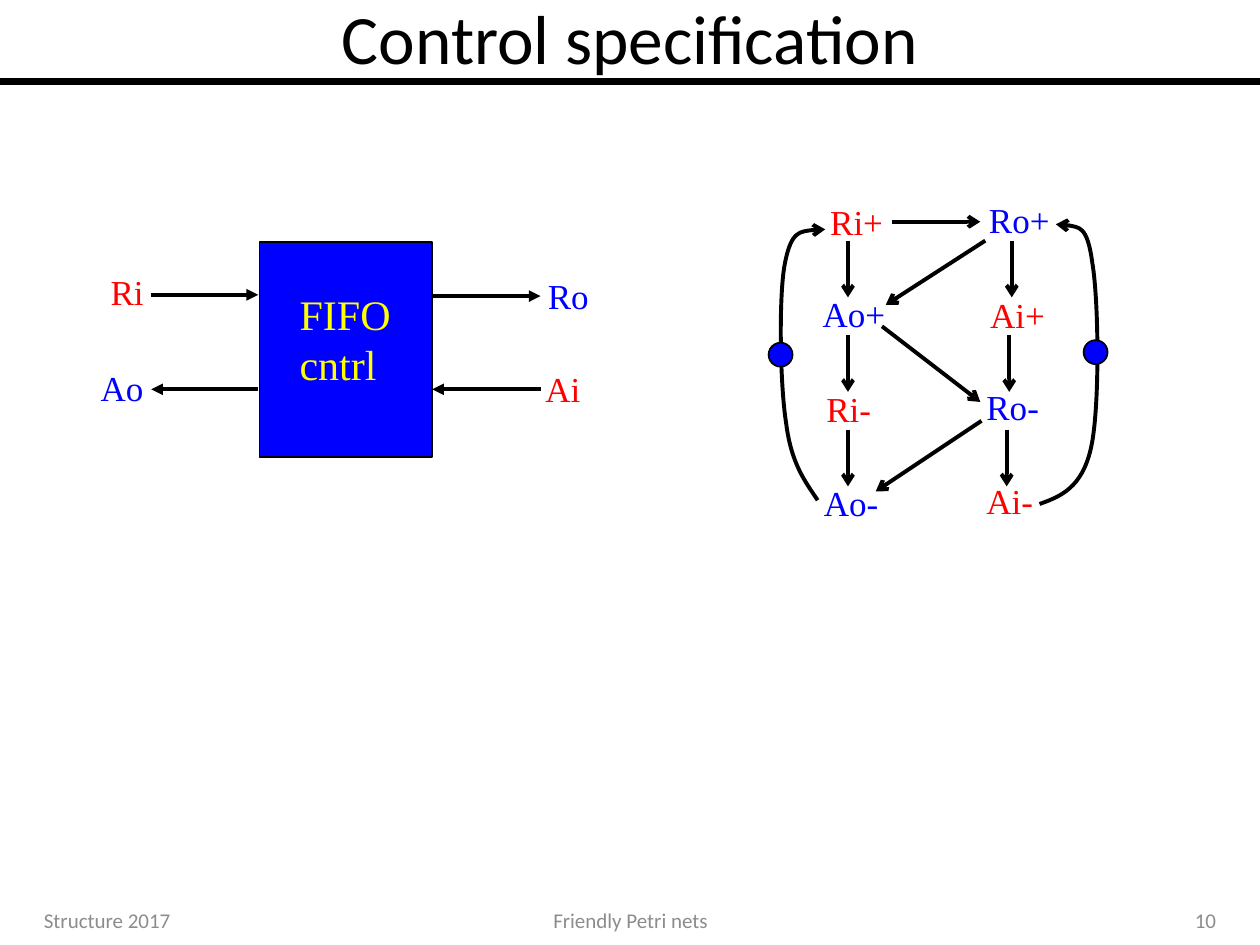
"""Build the control specification slide: a FIFO controller and its signal graph."""
from lxml import etree
from pptx import Presentation
from pptx.dml.color import RGBColor
from pptx.enum import shapes, text
from pptx.oxml import ns
from pptx.util import Inches, Pt

BLACK, RED, BLUE, YELLOW, GREY = "000000", "FF0000", "0000FF", "FFFF00", "8C8C8C"
SERIF, SANS = "Times New Roman", "Calibri"


def write(place, lines, color, size=20, font=SERIF, align="LEFT", anchor=None):
    box = page.shapes.add_textbox(*map(Inches, place))
    frame = box.text_frame
    frame.word_wrap = anchor is not None
    if anchor:
        frame.vertical_anchor = text.MSO_ANCHOR[anchor]
    else:
        frame.auto_size = text.MSO_AUTO_SIZE.SHAPE_TO_FIT_TEXT
    frame.text = lines
    for para in frame.paragraphs:
        para.alignment = text.PP_ALIGN[align]
        for span in para.runs:
            for name, value in {"size": Pt(size), "name": font}.items():
                setattr(span.font, name, value)
            span.font.color.rgb = RGBColor.from_string(color)


def stroke(item, width=2.25, head=None):
    item.line.color.rgb = RGBColor.from_string(BLACK)
    item.line.width = Pt(width)
    properties = item._element.spPr
    if head:
        etree.SubElement(properties.find(ns.qn("a:ln")), ns.qn("a:tailEnd"), type=head)
    etree.SubElement(properties, ns.qn("a:effectLst"))


deck = Presentation()
deck.slide_width, deck.slide_height = Inches(10), Inches(7.5)
page = deck.slides.add_slide(deck.slide_layouts[6])

write((0.5, 0, 9, 0.58), "Control specification", BLACK, 39.6, SANS, "CENTER", "MIDDLE")

solids = [
    ("RECTANGLE", 2.06, 1.92, 1.37, 1.71),
    ("OVAL", 6.1, 2.72, 0.19, 0.19),
    ("OVAL", 8.6, 2.7, 0.19, 0.19),
]
loops = [
    [(6.49, 3.97), (6.39, 3.82), (6.28, 3.68), (6.24, 3.36), (6.19, 3.05),
     (6.18, 2.34), (6.23, 2.09), (6.28, 1.83), (6.41, 1.82), (6.55, 1.82)],
    [(8.25, 4), (8.42, 3.94), (8.59, 3.87), (8.66, 3.55), (8.73, 3.23),
     (8.72, 2.38), (8.67, 2.09), (8.63, 1.79), (8.5, 1.78), (8.38, 1.78)],
]
for first, *others in loops:
    builder = page.shapes.build_freeform(*map(Inches, first))
    builder.add_line_segments([tuple(map(Inches, point)) for point in others], close=False)
    loop = builder.convert_to_shape()
    loop.fill.background()
    track = loop._element.spPr.find(".//" + ns.qn("a:path"))
    segments = track.findall(ns.qn("a:lnTo"))
    for start in range(0, len(segments), 3):
        curve = etree.SubElement(track, ns.qn("a:cubicBezTo"))
        for segment in segments[start:start + 3]:
            curve.append(segment[0])
            track.remove(segment)
    stroke(loop, head="arrow")

for kind, *place in solids:
    solid = page.shapes.add_shape(shapes.MSO_SHAPE[kind], *map(Inches, place))
    solid.fill.solid()
    solid.fill.fore_color.rgb = RGBColor.from_string(BLUE)
    stroke(solid, 1)

lines = {
    (4, None): [(0, 0.65, 10, 0.65)],
    (2.25, "triangle"): [
        (1.2, 2.34, 2.05, 2.34), (3.44, 2.35, 4.29, 2.35),
        (2.05, 3.09, 1.2, 3.09), (4.29, 3.09, 3.43, 3.09),
    ],
    (2.25, "arrow"): [
        (7.08, 1.76, 7.78, 1.76), (7.82, 1.91, 7.03, 2.42),
        (7, 2.59, 7.78, 3.19), (7.79, 3.34, 6.95, 3.9),
    ],
}
for row in range(3):
    top = 1.91 + 0.75 * row
    for x in (6.73, 8.03 - 0.02 * row):
        lines[2.25, "arrow"].append((x, top, x, top + 0.45))
for (width, head), ends in lines.items():
    for end in ends:
        line = page.shapes.add_connector(shapes.MSO_CONNECTOR.STRAIGHT, *map(Inches, end))
        stroke(line, width, head)

signals = [
    ("Ri+", 6.49, 1.54, 0.62), ("Ao+", 6.43, 2.27, 0.7),
    ("Ri-", 6.46, 3.03, 0.56), ("Ao-", 6.44, 3.77, 0.63),
    ("Ro+", 7.75, 1.53, 0.68), ("Ai+", 7.76, 2.28, 0.64),
    ("Ro-", 7.73, 3.01, 0.62), ("Ai-", 7.73, 3.76, 0.57),
    ("Ri", 0.78, 2.1, 0.46), ("Ro", 4.25, 2.13, 0.53),
    ("Ao", 0.7, 2.86, 0.54), ("Ai", 4.23, 2.87, 0.48),
]
for name, left, top, width in signals:
    write((left, top, width, 0.43), name, RED if name[:2] in ("Ri", "Ai") else BLUE)
write((2.28, 2.24, 0.93, 0.91), "FIFO\ncntrl", YELLOW, 24)

footers = [
    ("Structure 2017", 0.25, 2.33, "LEFT"),
    ("Friendly Petri nets", 3.42, 3.17, "CENTER"),
    ("10", 7.42, 2.33, "RIGHT"),
]
for words, left, width, align in footers:
    write((left, 7.1, width, 0.4), words, GREY, 12, SANS, align, "MIDDLE")

deck.save("out.pptx")
